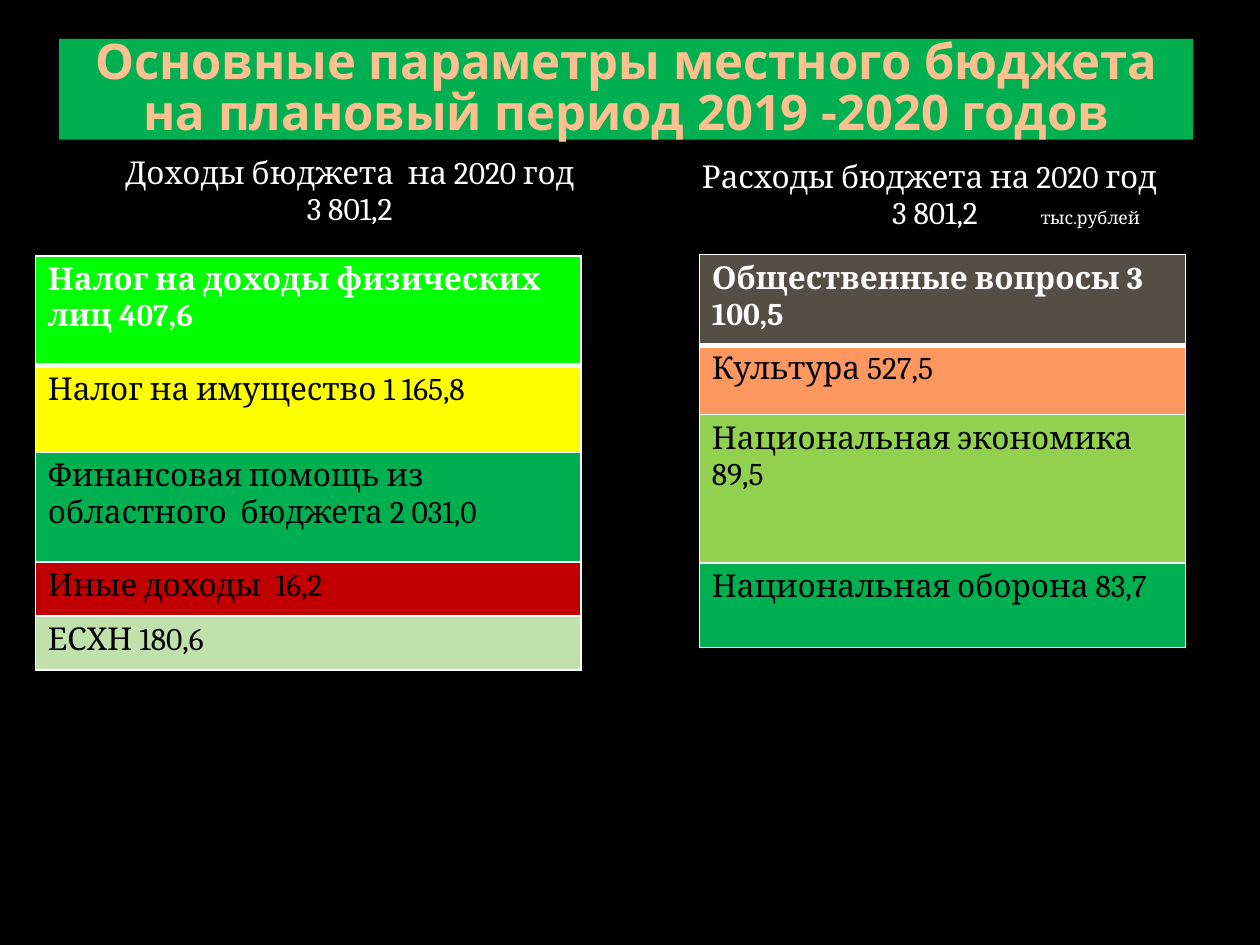
from lxml import etree
from pptx import Presentation
from pptx.dml.color import RGBColor
from pptx.enum.shapes import MSO_SHAPE
from pptx.enum.text import MSO_ANCHOR, PP_ALIGN
from pptx.oxml.ns import qn
from pptx.util import Inches, Pt

RECT = MSO_SHAPE.RECTANGLE
MIDDLE = MSO_ANCHOR.MIDDLE
LEFT, CENTER = PP_ALIGN.LEFT, PP_ALIGN.CENTER
PLAIN_STYLE = "{2D5ABB26-0587-4C30-8999-92F81FD0307C}"
COLORS = {
    "black": "000000", "white": "FFFFFF", "peach": "FFC091",
    "green": "00B050", "lime": "00FF00", "yellow": "FFFF00",
    "red": "C00000", "pale": "C0E1AB", "brown": "554E45",
    "orange": "FC9760", "leaf": "92D050",
}


def rgb(name):
    return RGBColor.from_string(COLORS[name])


def add_text(p, text, size=18, font="Cambria", color="white", bold=False, align=LEFT):
    p.alignment = align
    r = p.add_run()
    r.text = text
    r.font.size = Pt(size)
    r.font.name = font
    r.font.bold = bold
    r.font.color.rgb = rgb(color)


def set_tabs(p, stops):
    tabs = etree.SubElement(p._p.get_or_add_pPr(), qn("a:tabLst"))
    for stop in stops:
        etree.SubElement(tabs, qn("a:tab"), pos=str(Inches(stop)), algn="l")


def set_borders(cell, bottom):
    tc_pr = cell._tc.get_or_add_tcPr()
    widths = {"a:lnL": 1, "a:lnR": 1, "a:lnT": 1, "a:lnB": bottom}
    for i, (tag, width) in enumerate(widths.items()):
        ln = etree.Element(qn(tag), w=str(Pt(width)))
        fill = etree.SubElement(ln, qn("a:solidFill"))
        etree.SubElement(fill, qn("a:srgbClr"), val=COLORS["white"])
        tc_pr.insert(i, ln)


def add_column_table(s, x, y, w, heights):
    frame = s.shapes.add_table(len(heights), 1, Inches(x), Inches(y),
                               Inches(w), Inches(sum(heights)))
    table = frame.table
    table.first_row = table.horz_banding = False
    table._tbl.tblPr.find(qn("a:tableStyleId")).text = PLAIN_STYLE
    for row, height in zip(table.rows, heights):
        row.height = Inches(height)
    return table


def add_title(s, x, y, w, h, text):
    sp = s.shapes.add_shape(RECT, Inches(x), Inches(y), Inches(w), Inches(h))
    sp.shadow.inherit = False
    sp.fill.solid()
    sp.fill.fore_color.rgb = rgb("green")
    sp.line.fill.background()
    tf = sp.text_frame
    tf.word_wrap = True
    tf.vertical_anchor = MIDDLE
    p = tf.paragraphs[0]
    p.line_spacing = 0.87
    add_text(p, text, size=28, font="Open Sans", color="peach", bold=True, align=CENTER)


def add_heading(s, x, y, w, h, text, total, unit=None):
    cell = add_column_table(s, x, y, w, [h]).cell(0, 0)
    cell.fill.background()
    tf = cell.text_frame
    add_text(tf.paragraphs[0], text, align=CENTER)
    p = tf.add_paragraph()
    if unit:
        add_text(p, "\t" + total + "\t")
        add_text(p, unit, size=10)
        set_tabs(p, [1.84, 3.02])
    else:
        add_text(p, total, align=CENTER)


def add_budget(s, x, y, w, items):
    table = add_column_table(s, x, y, w, [height for _, height, _ in items])
    for i, (text, _, color) in enumerate(items):
        cell = table.cell(i, 0)
        first = i == 0
        cell.fill.solid()
        cell.fill.fore_color.rgb = rgb(color)
        set_borders(cell, 3 if first and len(items) > 1 else 1)
        add_text(cell.text_frame.paragraphs[0], text,
                 color="white" if first else "black", bold=first)


def main():
    prs = Presentation()
    prs.slide_width, prs.slide_height = Inches(10), Inches(7.5)
    s = prs.slides.add_slide(prs.slide_layouts[6])
    s.background.fill.solid()
    s.background.fill.fore_color.rgb = rgb("black")

    add_title(s, 0.47, 0.31, 9, 0.8,
              "Основные параметры местного бюджета на плановый период 2019 -2020 годов")
    add_heading(s, 0.52, 1.19, 4.51, 0.77, "Доходы бюджета  на 2020 год", "3 801,2")
    add_heading(s, 5.14, 1.22, 4.47, 0.76, "Расходы бюджета на 2020 год", "3 801,2",
                unit="тыс.рублей")
    add_budget(s, 0.28, 2.03, 4.33, [
        ("Налог на доходы физических лиц 407,6", 0.87, "lime"),
        ("Налог на имущество 1 165,8", 0.69, "yellow"),
        ("Финансовая помощь из областного  бюджета 2 031,0", 0.87, "green"),
        ("Иные доходы  16,2", 0.43, "red"),
        ("ЕСХН 180,6", 0.43, "pale"),
    ])
    add_budget(s, 5.55, 2.02, 3.86, [
        ("Общественные вопросы 3 100,5", 0.72, "brown"),
        ("Культура 527,5", 0.55, "orange"),
        ("Национальная экономика 89,5", 1.18, "leaf"),
        ("Национальная оборона 83,7", 0.67, "green"),
    ])
    prs.save("out.pptx")


if __name__ == "__main__":
    main()
